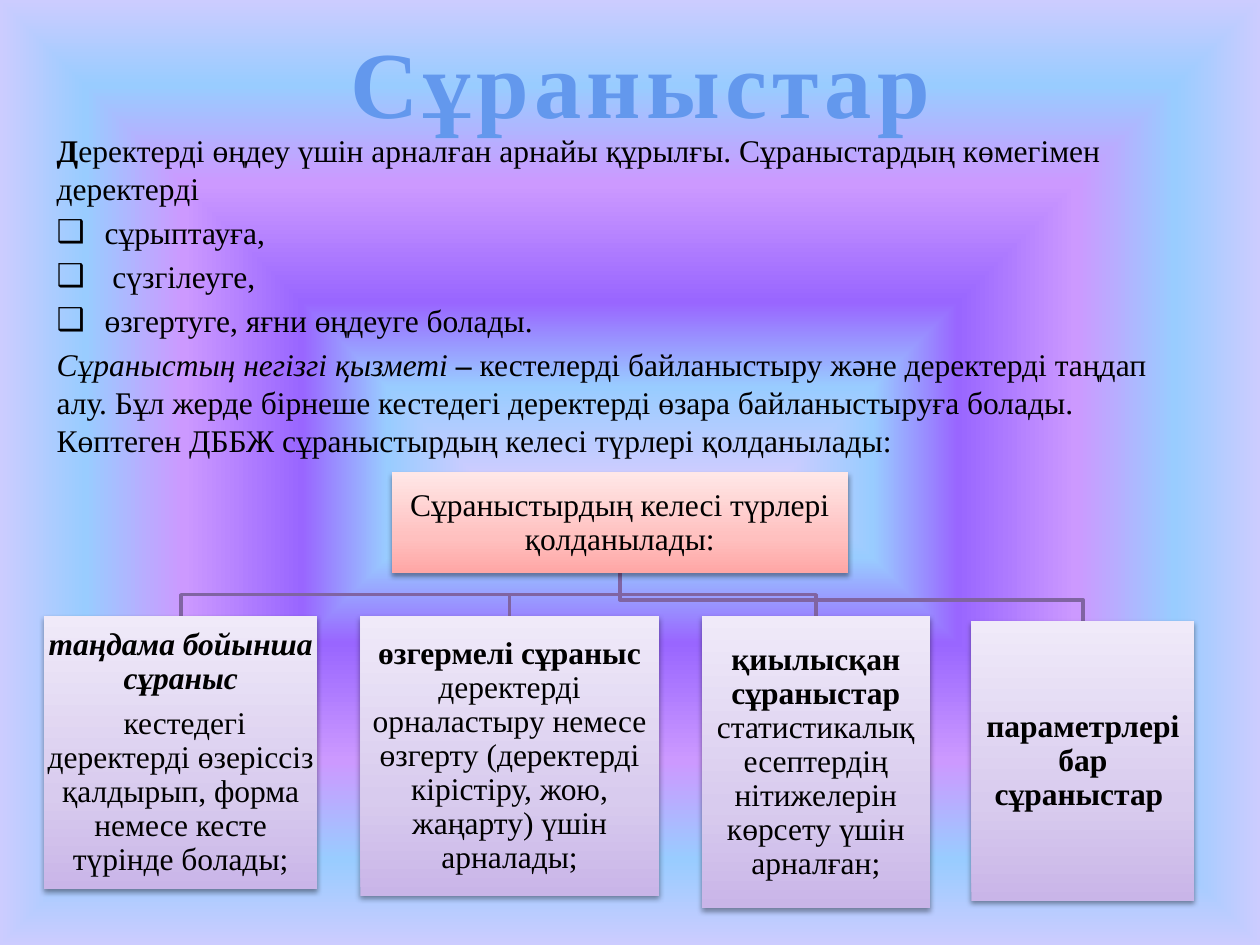
from lxml.etree import SubElement
from pptx import Presentation
from pptx.dml.color import RGBColor
from pptx.enum.shapes import MSO_SHAPE
from pptx.enum.text import MSO_ANCHOR, MSO_AUTO_SIZE, PP_ALIGN
from pptx.oxml import parse_xml
from pptx.oxml.ns import nsdecls, qn
from pptx.util import Inches, Pt

BLACK = RGBColor(0x00, 0x00, 0x00)
PLUM = RGBColor(0x80, 0x64, 0xA2)
PALE = RGBColor(0xF4, 0xF6, 0xF9)
LILAC = RGBColor(0xCC, 0xCC, 0xFF)
SKY = RGBColor(0x99, 0xCC, 0xFF)
VIOLET = RGBColor(0x99, 0x66, 0xFF)
ORCHID = RGBColor(0xCC, 0x99, 0xFF)

BACK = [(0, LILAC), (18, SKY), (36, VIOLET), (61, ORCHID), (82, SKY), (100, LILAC)]
BLUE = [(10, RGBColor(0x63, 0x98, 0xED)), (75, RGBColor(0x26, 0x5E, 0xA0))]
ROSE = [(0, RGBColor(0xFF, 0xA6, 0xA5)), (35, RGBColor(0xFF, 0xC0, 0xBF)),
        (100, RGBColor(0xFF, 0xE7, 0xE7))]
MAUVE = [(0, RGBColor(0xC9, 0xB5, 0xE8)), (35, RGBColor(0xD8, 0xCB, 0xEE)),
         (100, RGBColor(0xF0, 0xEA, 0xF9))]

CENTRE = "<a:path path='shape'><a:fillToRect l='50000' t='50000' r='50000' b='50000'/></a:path>"
DOWN = "<a:lin ang='5400000' scaled='0'/>"
UP = "<a:lin ang='16200000' scaled='0'/>"

FONT = {"name": "Times New Roman", "size": Pt(18)}
HEAD = {"size": Pt(54), "bold": True}
BOLD = {"bold": True}
SLANT = {"italic": True}
BOTH = {**BOLD, **SLANT}
TIGHT = {"alignment": PP_ALIGN.CENTER, "line_spacing": 0.9, "space_after": Pt(6.3)}
INSET = {"margin_left": Inches(0.01), "margin_right": Inches(0.01),
         "margin_top": Inches(0.01), "margin_bottom": Inches(0.01),
         "vertical_anchor": MSO_ANCHOR.MIDDLE, "word_wrap": True}

BODY = [
    (False, [("Д", BOLD), ("еректерді өңдеу үшін арналған арнайы құрылғы. "
                           "Сұраныстардың көмегімен деректерді", {})]),
    (True, [("сұрыптауға,", {})]),
    (True, [(" сүзгілеуге,", {})]),
    (True, [("өзгертуге, яғни өңдеуге болады.", {})]),
    (False, [("Сұраныстың негізгі қызметі ", SLANT), ("– ", BOLD),
             ("кестелерді байланыстыру және деректерді таңдап алу. Бұл жерде бірнеше "
              "кестедегі деректерді өзара байланыстыруға болады. Көптеген ДББЖ "
              "сұраныстырдың келесі түрлері қолданылады:", {})]),
]
ROOT = (3.11, 3.75, 3.62, 0.8)
TOPIC = [[("Сұраныстырдың келесі түрлері қолданылады:", {})]]
KINDS = [
    ((0.35, 4.89, 2.17, 2.17), [
        [("таңдама бойынша сұраныс", BOTH)],
        [(" кестедегі деректерді өзеріссіз қалдырып, форма немесе кесте "
          "түрінде болады;", {})]]),
    ((2.86, 4.89, 2.37, 2.22), [
        [("өзгермелі сұраныс ", BOLD),
         ("деректерді орналастыру немесе өзгерту (деректерді кірістіру, жою, "
          "жаңарту) үшін арналады;", {})]]),
    ((5.57, 4.89, 1.81, 2.32), [
        [("қиылысқан сұраныстар ", BOLD),
         ("статистикалық есептердің нітижелерін көрсету үшін арналған;", {})]]),
    ((7.71, 4.93, 1.77, 2.22), [[("параметрлері бар сұраныстар ", BOLD)]]),
]


def apply(item, style):
    for key, value in style.items():
        setattr(item, key, value)


def place(shape, spot):
    apply(shape, dict(zip(("left", "top", "width", "height"), map(Inches, spot))))


def shade(fill, root, stops, way):
    fill.gradient()
    old = root.find(".//" + qn("a:gradFill"))
    marks = "".join(f"<a:gs pos='{pos * 1000}'><a:srgbClr val='{tone}'/></a:gs>"
                    for pos, tone in stops)
    new = parse_xml(f"<a:gradFill {nsdecls('a')} rotWithShape='1'>"
                    f"<a:gsLst>{marks}</a:gsLst>{way}</a:gradFill>")
    old.getparent().replace(old, new)


class Deck:
    def __init__(self, font):
        self.font = font
        self.prs = Presentation()
        apply(self.prs, {"slide_width": Inches(10), "slide_height": Inches(7.5)})
        self.slide = self.prs.slides.add_slide(self.prs.slide_layouts[1])
        self.shapes = self.slide.shapes

    def back(self, stops):
        shade(self.slide.background.fill, self.slide.element, stops, CENTRE)

    def words(self, para, runs):
        for text, style in runs:
            run = para.add_run()
            run.text = text
            apply(run.font, {**self.font, "bold": False, "italic": False, **style})
            run.font.color.rgb = BLACK

    def title(self, spot, text, style, stops):
        shape = self.shapes.title
        place(shape, spot)
        frame = shape.text_frame
        apply(frame, {"word_wrap": False, "auto_size": MSO_AUTO_SIZE.SHAPE_TO_FIT_TEXT,
                      "vertical_anchor": MSO_ANCHOR.TOP})
        para = frame.paragraphs[0]
        para.alignment = PP_ALIGN.CENTER
        self.words(para, [(text, style)])
        shade(para.runs[0].font.fill, shape.element, stops, DOWN)
        props = shape.element.find(".//" + qn("a:rPr"))
        props.set("spc", "300")
        props.insert(0, parse_xml(
            f"<a:ln {nsdecls('a')} w='{Pt(0.9)}'><a:solidFill>"
            f"<a:srgbClr val='{PALE}'/></a:solidFill></a:ln>"))

    def body(self, spot, items):
        shape = self.shapes.placeholders[1]
        place(shape, spot)
        frame = shape.text_frame
        frame.auto_size = MSO_AUTO_SIZE.NONE
        for num, (dot, runs) in enumerate(items):
            para = frame.add_paragraph() if num else frame.paragraphs[0]
            self.words(para, runs)
            props = para._p.get_or_add_pPr()
            gap = Inches(0.38) if dot else 0
            props.set("marL", str(gap))
            props.set("indent", str(-gap))
            if dot:
                SubElement(props, qn("a:buChar")).set("char", "❑")
            else:
                SubElement(props, qn("a:buNone"))

    def box(self, spot, paras, stops):
        shape = self.shapes.add_shape(MSO_SHAPE.RECTANGLE, *map(Inches, spot))
        shade(shape.fill, shape.element, stops, UP)
        shape.line.fill.background()
        shape.shadow.inherit = False
        glow = shape.element.spPr.find(qn("a:effectLst"))
        glow.append(parse_xml(
            f"<a:outerShdw {nsdecls('a')} blurRad='{Pt(3.1)}' dist='{Pt(1.6)}' "
            f"dir='5400000' rotWithShape='0'><a:srgbClr val='{BLACK}'>"
            "<a:alpha val='38000'/></a:srgbClr></a:outerShdw>"))
        frame = shape.text_frame
        apply(frame, INSET)
        for num, runs in enumerate(paras):
            para = frame.add_paragraph() if num else frame.paragraphs[0]
            apply(para, TIGHT)
            self.words(para, runs)

    def branch(self, start, end, drop):
        (left, top), (right, low) = start, end
        bend = low - drop
        pen = self.shapes.build_freeform(Inches(left), Inches(top))
        pen.add_line_segments([(Inches(x), Inches(y)) for x, y in
                               ((left, bend), (right, bend), (right, low))], close=False)
        shape = pen.convert_to_shape()
        shape.fill.background()
        shape.shadow.inherit = False
        shape.line.color.rgb = PLUM
        shape.line.width = Pt(2)

    def save(self):
        self.prs.save("out.pptx")


def main():
    deck = Deck(FONT)
    deck.back(BACK)
    deck.title((2.21, 0.14, 5.75, 1.01), "Сұраныстар", HEAD, BLUE)
    deck.body((0.35, 0.99, 9, 6.41), BODY)
    left, top, width, height = ROOT
    start = (left + width / 2, top + height)
    for (x, y, wide, _), _ in reversed(KINDS):
        deck.branch(start, (x + wide / 2, y), 0.17)
    deck.box(ROOT, TOPIC, ROSE)
    for spot, paras in KINDS:
        deck.box(spot, paras, MAUVE)
    deck.save()


if __name__ == "__main__":
    main()
